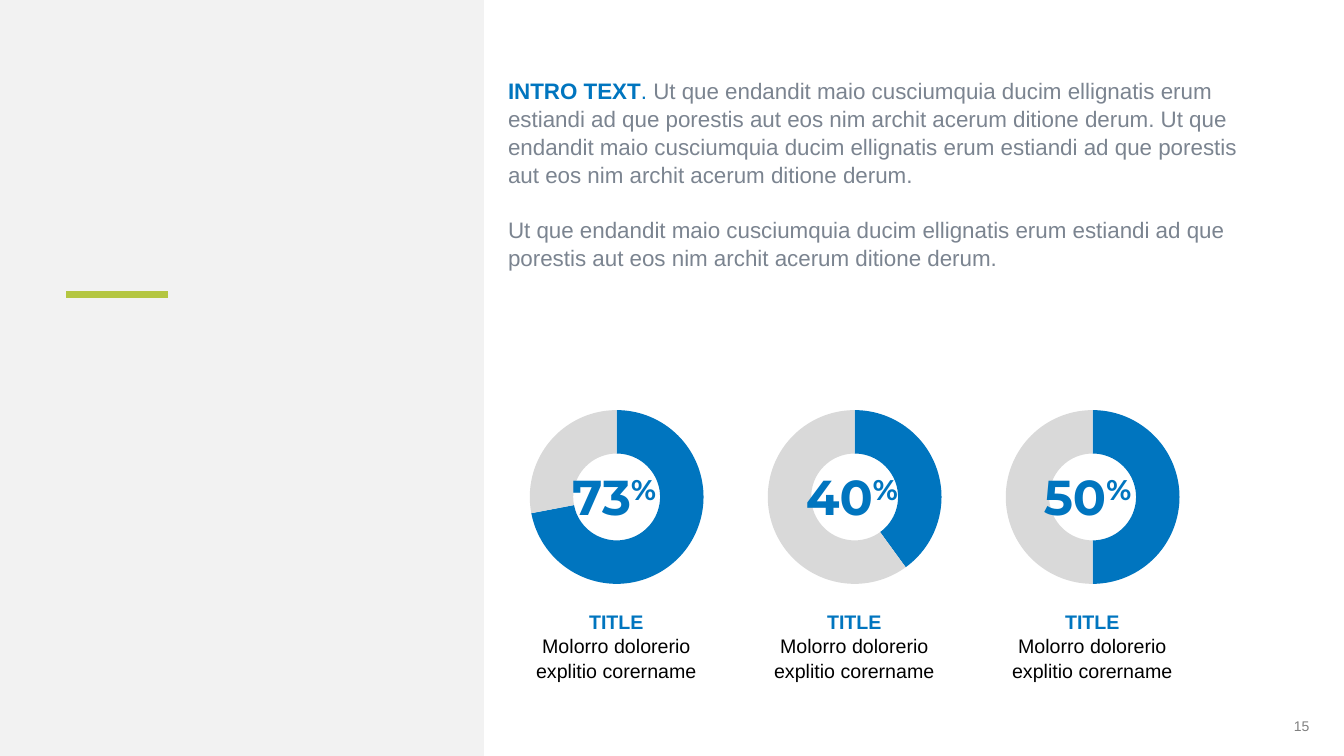
from lxml.etree import SubElement as Sub
from pptx import Presentation
from pptx.chart.data import CategoryChartData as Data
from pptx.dml.color import RGBColor as Rgb
from pptx.enum.chart import XL_CHART_TYPE as Kind
from pptx.enum.shapes import MSO_CONNECTOR as Link, MSO_SHAPE as Form
from pptx.enum.text import MSO_ANCHOR as Anchor, MSO_AUTO_SIZE as Fit, PP_ALIGN as Align
from pptx.oxml.ns import qn
from pptx.util import Pt

HEX = {"blue": "0075BF", "lime": "B4C641", "pale": "F2F2F2", "ring": "D9D9D9",
       "slate": "7B8490", "gray": "808080", "black": "000000"}
LOREM = "Ut que endandit maio cusciumquia ducim ellignatis erum estiandi ad que porestis aut eos nim archit acerum ditione derum."
DIALS = [("73", (72, 28), 69), ("40", (40, 60), 66), ("50", (50, 50), 66)]


def tint(name):
    return Rgb.from_string(HEX[name])


def apply(item, form):
    for key, val in form.items():
        setattr(item, key, val)


class Deck:
    """Holds the style and the current slide, and draws each kind of element."""

    def __init__(self):
        self.prs = Presentation()
        apply(self.prs, {"slide_width": Pt(960), "slide_height": Pt(540)})
        self.slide = self.prs.slides.add_slide(self.prs.slide_layouts[1])
        self.shapes = self.slide.shapes
        title = self.shapes.title.element
        title.getparent().remove(title)

    def panel(self, box, color):
        rect = self.shapes.add_shape(Form.RECTANGLE, *map(Pt, box))
        rect.shadow.inherit = False
        rect.fill.solid()
        rect.fill.fore_color.rgb = tint(color)
        rect.line.fill.background()

    def rule(self, ends, color, width):
        line = self.shapes.add_connector(Link.STRAIGHT, *map(Pt, ends))
        line.line.color.rgb = tint(color)
        line.line.width = Pt(width)
        Sub(line.element.spPr, qn("a:effectLst"))

    def flow(self, frame, paras, size, face="Arial", align=Align.LEFT, anchor=Anchor.TOP, lead=1.0, gap=0):
        apply(frame, {"word_wrap": True, "auto_size": Fit.NONE, "vertical_anchor": anchor})
        for i, runs in enumerate(paras):
            para = frame.add_paragraph() if i else frame.paragraphs[0]
            apply(para, {"alignment": align, "line_spacing": lead, "space_before": Pt(gap if i else 0)})
            for text, color, bold, *base in runs:
                run = para.add_run()
                run.text = text
                apply(run.font, {"name": face, "size": Pt(size), "bold": bold})
                run.font.color.rgb = tint(color)
                if base:
                    run.font._element.set("baseline", str(base[0] * 1000))

    def text(self, box, paras, size, **form):
        frame = self.shapes.add_textbox(*map(Pt, box)).text_frame
        self.flow(frame, paras, size, **form)

    def body(self, box, paras, size, **form):
        hold = self.slide.placeholders[1]
        apply(hold, dict(zip(("left", "top", "width", "height"), map(Pt, box))))
        self.flow(hold.text_frame, paras, size, **form)
        for para in hold.text_frame.paragraphs:
            props = para._p.get_or_add_pPr()
            props.set("marL", "0")
            props.set("indent", "0")
            Sub(props, qn("a:buNone"))

    def ring(self, box, vals):
        data = Data()
        data.categories = ["1", "2"]
        data.add_series("Series 1", vals)
        chart = self.shapes.add_chart(Kind.DOUGHNUT, *map(Pt, box), data).chart
        apply(chart, {"has_legend": False, "has_title": False})
        apply(chart.font, {"name": "Arial", "size": Pt(10)})
        chart.font.color.rgb = tint("black")
        plot = chart.plots[0]
        plot.vary_by_categories = True
        plot._element.find(qn("c:holeSize")).set("val", "75")
        line = plot.series[0].format.line
        line.color.rgb = tint("ring")
        line.width = Pt(0.75)
        for i, color in enumerate(("blue", "ring")):
            fill = plot.series[0].points[i].format.fill
            fill.solid()
            fill.fore_color.rgb = tint(color)


def main():
    deck = Deck()
    deck.panel((0, 0, 345.6, 540), "pale")
    deck.rule((47.5, 210.2, 120.2, 210.2), "lime", 5)
    intro = [[("INTRO TEXT", "blue", True), (". ", "blue", False), (f"{LOREM} {LOREM}", "slate", False)],
             [(LOREM, "slate", False)]]
    deck.body((355.7, 51, 546.5, 163), intro, 16, lead=1.04, gap=19)
    label = [[("TITLE", "blue", True)], [("Molorro dolorerio explitio corername", "black", False)]]
    for i, (num, vals, shift) in enumerate(DIALS):
        left = 332.5 + 170 * i
        deck.ring((left, 283, 216, 144), vals)
        deck.text((left + shift, 329.8, 93, 50), [[(num, "blue", True), ("%", "blue", True, 30)]],
                  35, face="Montserrat")
        deck.text((left + 43, 431.3, 129.6, 58.3), label, 14, align=Align.CENTER, lead=1.04)
    deck.text((726.5, 507.6, 216, 21.6), [[("15", "gray", False)]], 10,
              align=Align.RIGHT, anchor=Anchor.MIDDLE)
    deck.prs.save("out.pptx")


if __name__ == "__main__":
    main()
